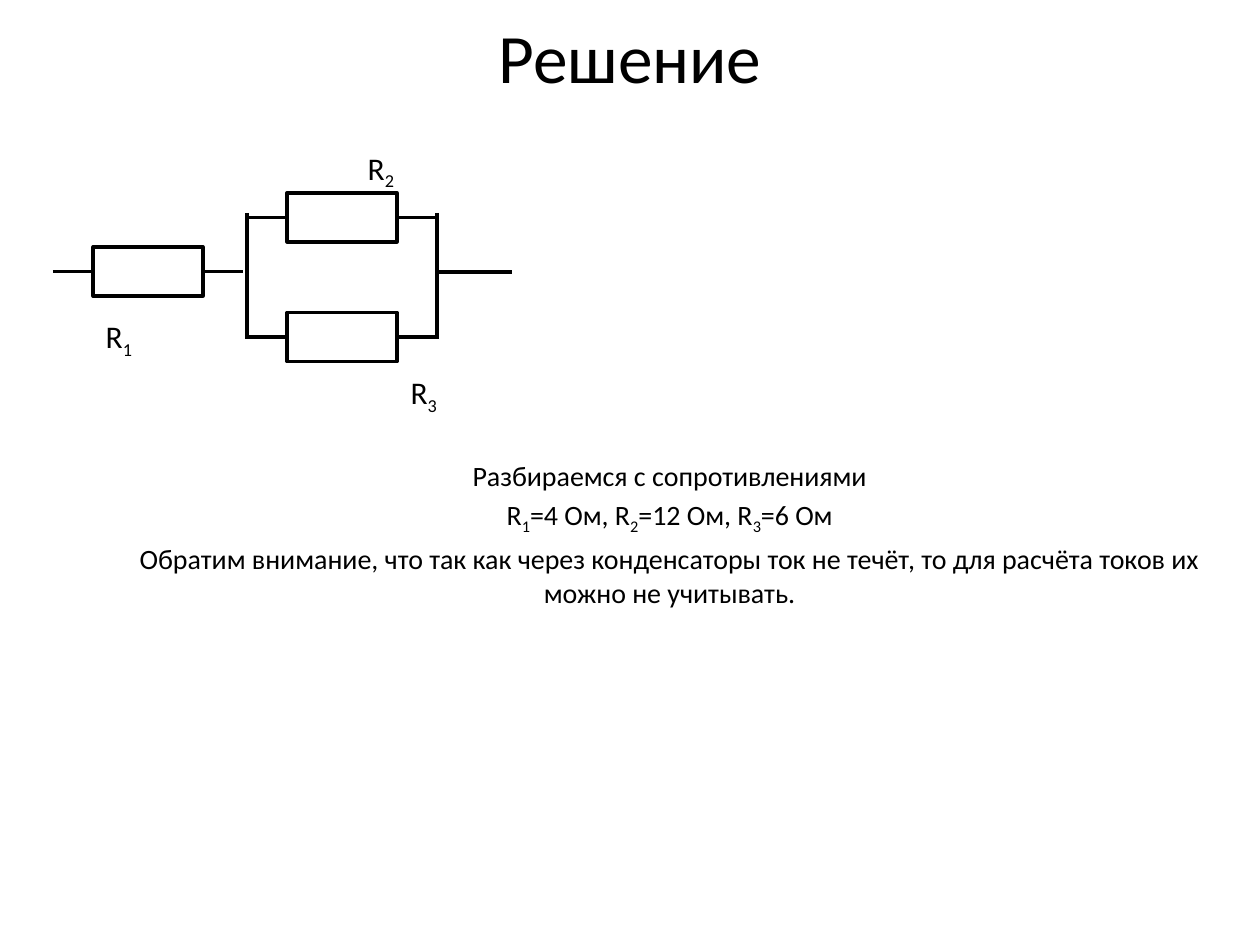
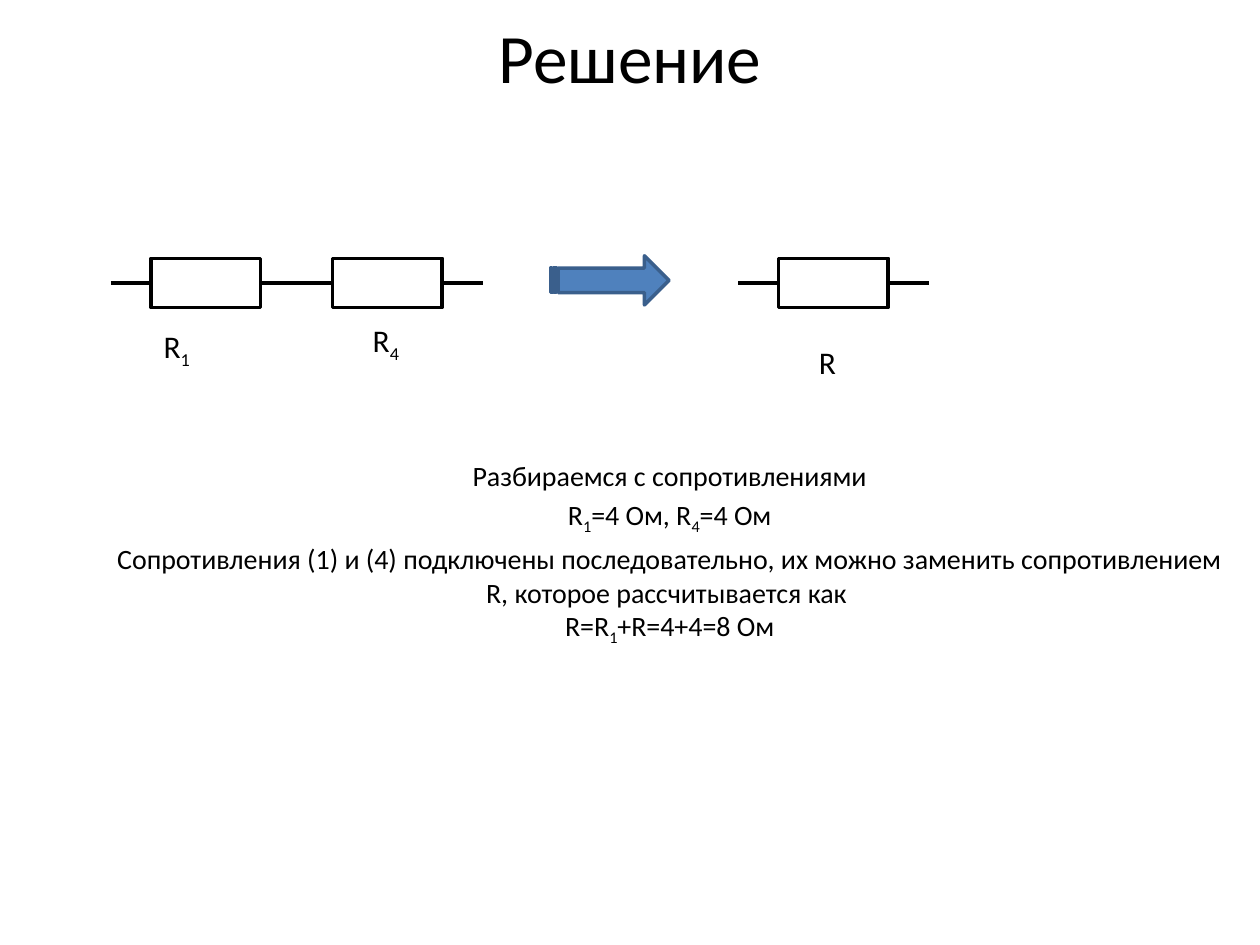
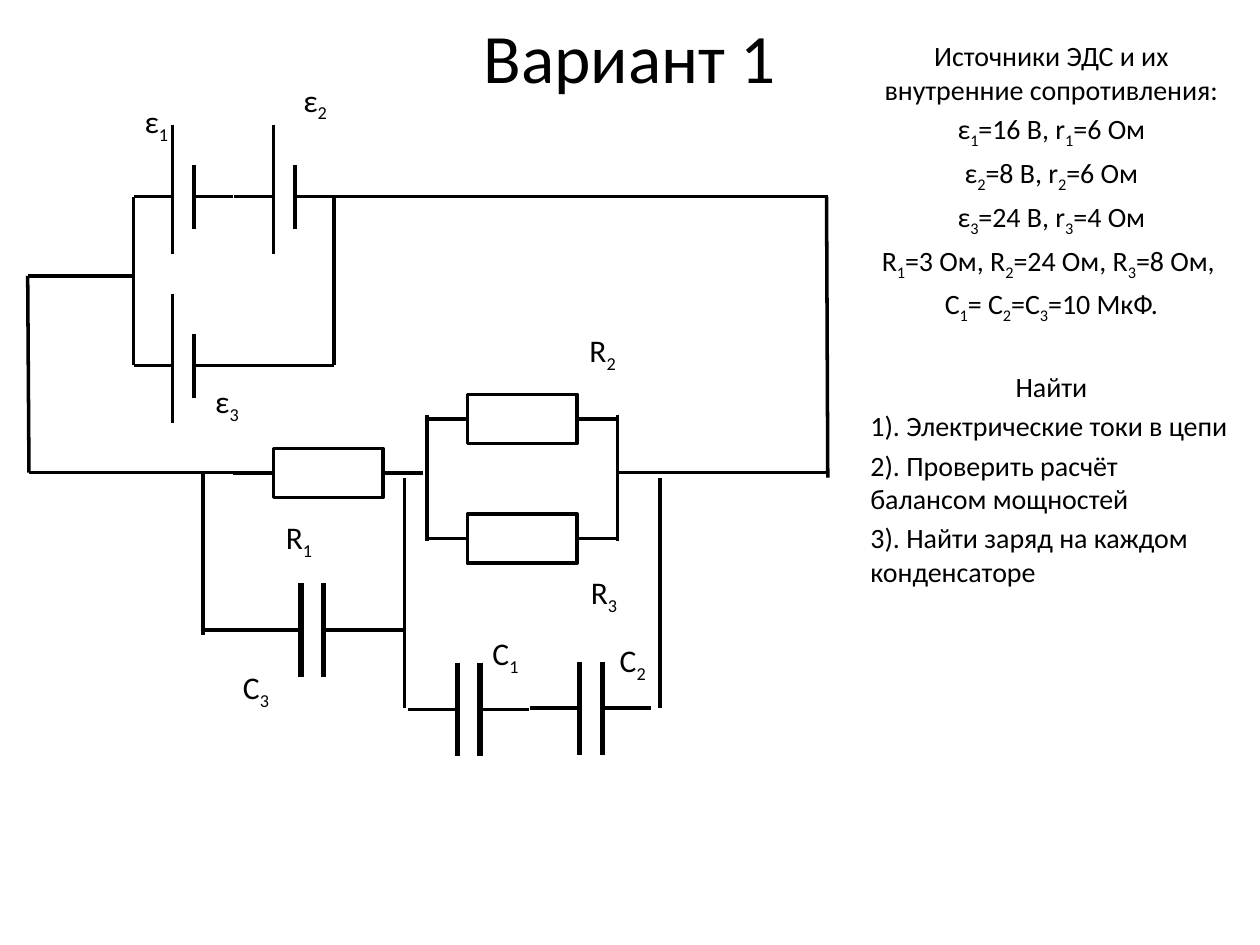
from lxml import etree
from pptx import Presentation
from pptx.dml.color import RGBColor
from pptx.enum.shapes import MSO_CONNECTOR, MSO_SHAPE
from pptx.enum.text import MSO_ANCHOR, MSO_AUTO_SIZE, PP_ALIGN
from pptx.oxml.ns import qn
from pptx.util import Inches, Pt

STRAIGHT = MSO_CONNECTOR.STRAIGHT
RECTANGLE = MSO_SHAPE.RECTANGLE
STRIPED_ARROW = MSO_SHAPE.STRIPED_RIGHT_ARROW
MIDDLE = MSO_ANCHOR.MIDDLE
NO_FIT, FIT_SHAPE = MSO_AUTO_SIZE.NONE, MSO_AUTO_SIZE.SHAPE_TO_FIT_TEXT
LEFT, CENTER = PP_ALIGN.LEFT, PP_ALIGN.CENTER

FONT = "Calibri"
INK, ARROW_FILL, ARROW_LINE = "000000", "4F81BD", "3A5F8C"
TITLE_SIZE, BODY_SIZE, LABEL_SIZE = 39.6, 16, 18
WIRE, PLATE = 2, 3
BODY_GAP = 3.2
RESISTOR_W, RESISTOR_H, LEAD = 0.87, 0.39, 0.32


def color(hex_value):
    return RGBColor.from_string(hex_value)


class CircuitDeck:
    def __init__(self):
        self.prs = Presentation()
        self.prs.slide_width, self.prs.slide_height = Inches(10), Inches(7.5)
        self.slide = None

    # Text
    def new_slide(self, heading):
        self.slide = self.prs.slides.add_slide(self.prs.slide_layouts[5])
        title = self.slide.shapes.title
        title.left, title.top = Inches(0.75), Inches(0.13)
        title.width, title.height = Inches(8.5), Inches(0.63)
        frame = title.text_frame
        frame.auto_size, frame.vertical_anchor = NO_FIT, MIDDLE
        self.fill_paragraph(frame.paragraphs[0], heading, TITLE_SIZE, CENTER)

    def fill_paragraph(self, paragraph, text, size, align=LEFT):
        """Fill a paragraph; the character after "_" becomes a subscript."""
        paragraph.alignment = align
        font = paragraph.font
        font.name, font.size = FONT, Pt(size)
        font.color.rgb = color(INK)
        for line_number, line in enumerate(text.split("\n")):
            if line_number:
                paragraph.add_line_break()
            first, *rest = line.split("_")
            paragraph.add_run().text = first
            for part in rest:
                index = paragraph.add_run()
                index.text = part[0]
                index.font._element.set("baseline", "-25000")
                if part[1:]:
                    paragraph.add_run().text = part[1:]

    def text_frame(self, x, y, w, h):
        box = self.slide.shapes.add_textbox(Inches(x), Inches(y), Inches(w), Inches(h))
        return box.text_frame

    def body(self, x, y, w, h, paragraphs, top_inset=0.05):
        """Each paragraph is (text, alignment, space before)."""
        frame = self.text_frame(x, y, w, h)
        frame.word_wrap, frame.margin_top = True, Inches(top_inset)
        for number, (text, align, gap) in enumerate(paragraphs):
            paragraph = frame.add_paragraph() if number else frame.paragraphs[0]
            paragraph.space_before = Pt(gap)
            self.fill_paragraph(paragraph, text, BODY_SIZE, align)

    def explanation(self, *texts):
        self.body(0.74, 3.28, 9.15, 3.78,
                  [(text, CENTER, BODY_GAP) for text in texts], top_inset=0.36)

    def label(self, text, x, y, w=0.42):
        frame = self.text_frame(x, y, w, 0.4)
        frame.word_wrap, frame.auto_size = False, FIT_SHAPE
        self.fill_paragraph(frame.paragraphs[0], text, LABEL_SIZE)

    # Lines and shapes
    def wire(self, x1, y1, x2, y2, weight=WIRE):
        line = self.slide.shapes.add_connector(
            STRAIGHT, Inches(x1), Inches(y1), Inches(x2), Inches(y2))
        line.line.color.rgb, line.line.width = color(INK), Pt(weight)
        etree.SubElement(line._element.spPr, qn("a:effectLst"))
        return line

    def shape(self, kind, x, y, w, h, outline=INK, fill=None):
        item = self.slide.shapes.add_shape(kind, Inches(x), Inches(y), Inches(w), Inches(h))
        item.shadow.inherit = False
        item.line.color.rgb, item.line.width = color(outline), Pt(WIRE)
        if fill:
            item.fill.solid()
            item.fill.fore_color.rgb = color(fill)
        else:
            item.fill.background()
        return item

    # Circuit parts
    def resistor(self, x, y):
        block = self.shape(RECTANGLE, x, y, RESISTOR_W, RESISTOR_H)
        mid, right = y + RESISTOR_H / 2, x + RESISTOR_W
        self.wire(x - LEAD, mid, x, mid).end_connect(block, 1)
        self.wire(right, mid, right + LEAD, mid).begin_connect(block, 3)

    def parallel_pair(self, x, y):
        for top in (y, y + 0.95):
            self.resistor(x, top)
        for node in (x - LEAD, x + RESISTOR_W + LEAD):
            self.wire(node, y + 0.16, node, y + 1.16)

    def capacitor(self, x, y):
        for plate, end in ((x, x - 0.39), (x + 0.18, x + 0.57)):
            self.wire(plate, y - 0.37, plate, y + 0.37, PLATE)
            self.wire(plate, y, end, y)

    def battery(self, x, y):
        short = x + 0.17
        self.wire(x, y - 0.57, x, y + 0.46)
        self.wire(short, y - 0.25, short, y + 0.26)
        self.wire(x - 0.31, y, x, y)
        self.wire(short, y, short + 0.31, y)


def resistances(deck):
    deck.new_slide("Решение")
    deck.explanation(
        "Разбираемся с сопротивлениями",
        "R_1=4 Ом, R_2=12 Ом, R_3=6 Ом",
        "Обратим внимание, что так как через конденсаторы ток не течёт, "
        "то для расчёта токов их можно не учитывать.")
    deck.resistor(0.74, 1.96)
    deck.parallel_pair(2.28, 1.53)
    deck.wire(3.47, 2.16, 4.06, 2.16)
    for text, x, y in (("R_1", 0.74, 2.47), ("R_3", 3.16, 2.91), ("R_2", 2.82, 1.13)):
        deck.label(text, x, y)


def series_replacement(deck):
    deck.new_slide("Решение")
    deck.explanation(
        "Разбираемся с сопротивлениями",
        "R_1=4 Ом, R_4=4 Ом",
        "Сопротивления (1) и (4) подключены последовательно, их можно заменить "
        "сопротивлением R, которое рассчитывается как \nR=R_1+R=4+4=8 Ом")
    for x in (1.2, 2.64, 6.18):
        deck.resistor(x, 2.05)
    deck.shape(STRIPED_ARROW, 4.37, 2.03, 0.94, 0.39, ARROW_LINE, ARROW_FILL)
    deck.label("R_1", 1.2, 2.55)
    deck.label("R_4", 2.86, 2.5)
    deck.label("R", 6.4, 2.67, 0.34)


def variant(deck):
    deck.new_slide("Вариант 1")

    # Given values and tasks
    given = ("Источники ЭДС и их внутренние сопротивления:",
             "ε_1=16 В, r_1=6 Ом",
             "ε_2=8 В, r_2=6 Ом",
             "ε_3=24 В, r_3=4 Ом",
             "R_1=3 Ом, R_2=24 Ом, R_3=8 Ом, ",
             "С_1= С_2=С_3=10 МкФ.")
    tasks = ("1). Электрические токи в цепи",
             "2). Проверить расчёт балансом мощностей",
             "3). Найти заряд на каждом конденсаторе")
    deck.body(6.81, 0.26, 3.07, 6.79,
              [(text, CENTER, BODY_GAP) for text in given]
              + [("Найти", CENTER, 25.5)]
              + [(text, LEFT, BODY_GAP) for text in tasks])

    # Circuit parts
    for x, y in ((1.37, 1.56), (2.17, 1.56), (1.37, 2.9)):
        deck.battery(x, y)
    deck.resistor(2.17, 3.56)
    deck.parallel_pair(3.71, 3.13)
    for x, y in ((3.63, 5.63), (4.6, 5.62), (2.39, 5)):
        deck.capacitor(x, y)

    # Wires
    for ends in (
        (1.06, 2.9, 1.06, 1.56), (0.22, 2.19, 1.05, 2.19),
        (0.23, 3.75, 0.22, 2.19), (0.23, 3.75, 1.88, 3.75),
        (2.65, 1.56, 6.57, 1.56), (6.56, 1.56, 6.57, 3.79),
        (4.91, 3.75, 6.56, 3.75), (1.82, 2.9, 2.65, 2.9),
        (2.65, 2.9, 2.65, 1.56), (1.61, 3.75, 1.61, 5.04),
        (1.61, 5, 2.1, 5), (2.69, 5, 3.21, 5),
        (3.21, 5.62, 3.21, 3.79), (5.24, 5.62, 5.24, 3.79),
    ):
        deck.wire(*ends)

    # Labels
    for text, x, y in (
        ("ε_1", 1.05, 0.76), ("ε_2", 2.31, 0.59), ("ε_3", 1.61, 2.98),
        ("R_1", 2.17, 4.06), ("R_2", 4.58, 2.58), ("R_3", 4.59, 4.5),
        ("С_1", 3.81, 4.98), ("С_2", 4.82, 5.04), ("С_3", 1.83, 5.25),
    ):
        deck.label(text, x, y, 0.4 if text.startswith("ε") else 0.42)


def main():
    deck = CircuitDeck()
    resistances(deck)
    series_replacement(deck)
    variant(deck)
    deck.prs.save("out.pptx")


if __name__ == "__main__":
    main()
